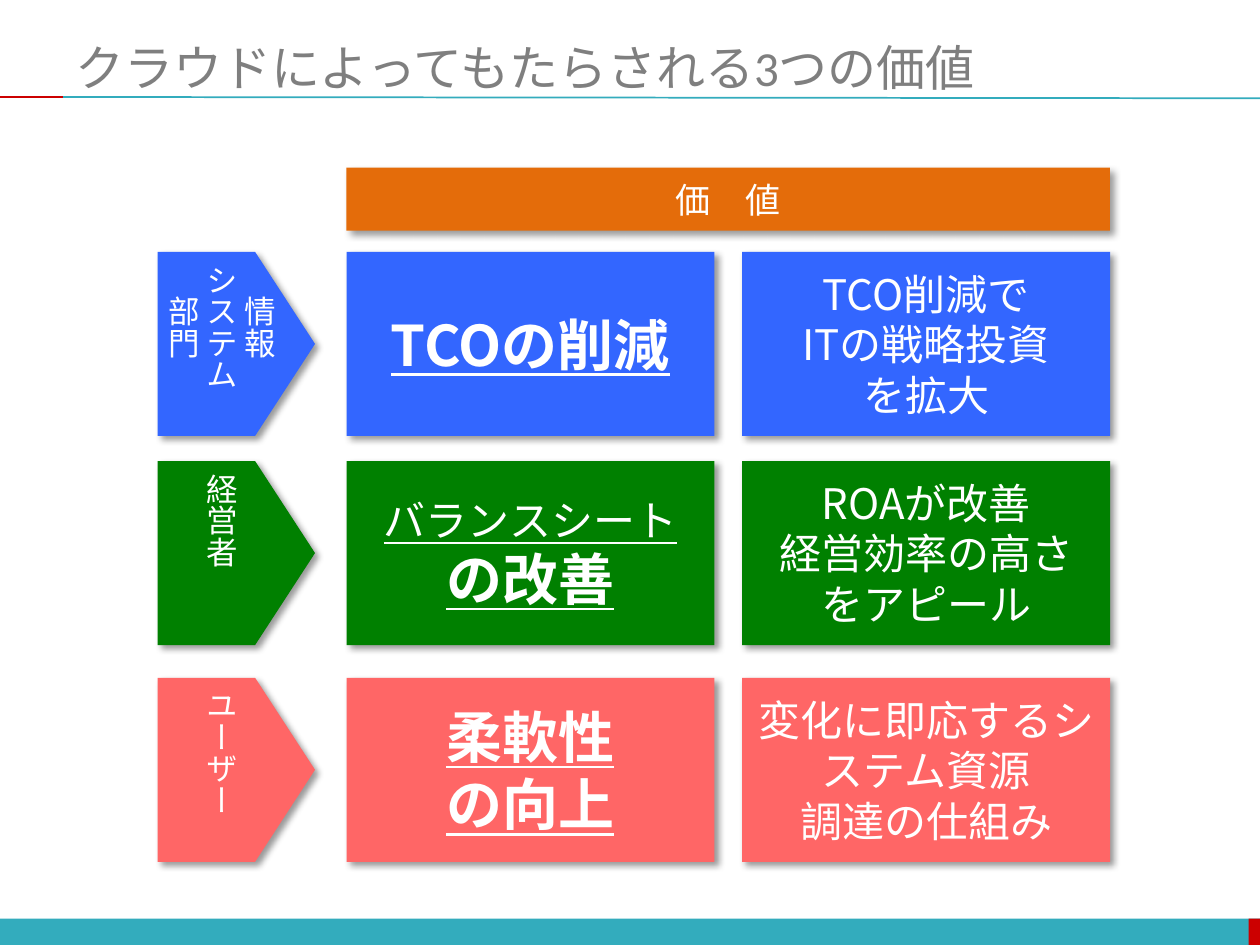
from lxml.etree import SubElement
from pptx import Presentation
from pptx.dml.color import RGBColor
from pptx.enum.shapes import MSO_CONNECTOR as Connector, MSO_SHAPE as Shape
from pptx.enum.text import MSO_ANCHOR as Anchor, PP_ALIGN as Align
from pptx.oxml.ns import qn
from pptx.util import Inches, Pt

COLORS = {"teal": "33ACBD", "red": "CC0000", "gray": "7F7F7F", "white": "FFFFFF",
          "orange": "E46C0A", "blue": "3366FF", "green": "008000", "pink": "FF6666",
          "black": "000000"}
JAPANESE = "Noto Sans CJK JP"
HEADING = {"size": Pt(28), "name": "Calibri"}
BANNER = {"size": Pt(20), "name": JAPANESE}
AUDIENCE = {"size": Pt(18), "name": JAPANESE}
DETAIL = {"size": Pt(24), "name": JAPANESE}
LINK = {**DETAIL, "underline": True}
STRONG = {**LINK, "size": Pt(32), "bold": True}

ROWS = [
    (2, "blue", ["情報", "システム", "部門"], [("TCOの削減", STRONG)],
     ["TCO削減で", "ITの戦略投資", "を拡大"]),
    (3.66, "green", ["経営者"], [("バランスシート", LINK), ("の改善", STRONG)],
     ["ROAが改善", "経営効率の高さ", "をアピール"]),
    (5.38, "pink", ["ユーザー"], [("柔軟性", STRONG), ("の向上", STRONG)],
     ["変化に即応するシステム資源", "調達の仕組み"]),
]


def color(name):
    """Return the named palette colour."""
    return RGBColor.from_string(COLORS[name])


def write(frame, lines, tint, align):
    """Fill a text frame with one paragraph per (text, format) pair."""
    frame.word_wrap = True
    frame.vertical_anchor = Anchor.MIDDLE
    for index, (text, style) in enumerate(lines):
        para = frame.paragraphs[0] if index == 0 else frame.add_paragraph()
        para.alignment = align
        span = para.add_run()
        span.text = text
        for key, value in style.items():
            setattr(span.font, key, value)
        span.font.color.rgb = color(tint)
        SubElement(span.font._element, qn("a:ea"), typeface=JAPANESE)


def add_block(slide, kind, box, fill):
    """Add a plain filled shape in a box given in inches."""
    shape = slide.shapes.add_shape(kind, *map(Inches, box))
    shape.shadow.inherit = False
    shape.fill.solid()
    shape.fill.fore_color.rgb = color(fill)
    shape.line.fill.background()
    return shape


def add_card(slide, kind, adjust, box, fill, lines):
    """Add a shadowed shape with centred white text."""
    card = add_block(slide, kind, box, fill)
    card.adjustments[0] = adjust
    effects = card._element.spPr.find(qn("a:effectLst"))
    shadow = SubElement(effects, qn("a:outerShdw"), blurRad=str(Pt(4)), dist=str(Pt(3)),
                        dir="2700000", algn="tl", rotWithShape="0")
    tint = SubElement(shadow, qn("a:srgbClr"), val=COLORS["black"])
    SubElement(tint, qn("a:alpha"), val="40000")
    write(card.text_frame, lines, "white", Align.CENTER)
    return card


def add_rule(slide, start, end, tint):
    """Draw a thin line between two points in inches."""
    rule = slide.shapes.add_connector(Connector.STRAIGHT, *map(Inches, start + end))
    rule.line.color.rgb = color(tint)
    rule.line.width = Pt(1)
    SubElement(rule._element.spPr, qn("a:effectLst"))


def add_header(slide, left, top, width, height):
    """Place the title and the two-colour rule under it."""
    base = top + height + 0.01
    add_rule(slide, (left, base), (left + width, base + 0.01), "teal")
    add_rule(slide, (0, base), (left, base), "red")
    title = slide.shapes.add_textbox(*map(Inches, (left, top, width, height)))
    write(title.text_frame, [("クラウドによってもたらされる3つの価値", HEADING)],
          "gray", Align.LEFT)


def add_footer(slide, left, top, width, height):
    """Place the bottom bar with its red right end."""
    end = 0.09
    add_block(slide, Shape.RECTANGLE, (left, top, width, height), "teal")
    add_block(slide, Shape.RECTANGLE, (left + width - end, top, end, height), "red")


def add_row(slide, left, top, width, height, fill, audience, value, detail):
    """Place an audience arrow and its two value cards."""
    arrow_width, card_width = 1.25, 2.92
    arrow = add_card(slide, Shape.PENTAGON, 0.38, (left, top, arrow_width, height), fill,
                     [(text, AUDIENCE) for text in audience])
    arrow.text_frame.word_wrap = False
    arrow.text_frame._txBody.bodyPr.set("vert", "eaVert")
    cards = [(left + arrow_width + 0.25, value),
             (left + width - card_width, [(text, DETAIL) for text in detail])]
    for card_left, lines in cards:
        add_card(slide, Shape.ROUNDED_RECTANGLE, 0, (card_left, top, card_width, height),
                 fill, lines)


def main():
    """Build and save the slide."""
    deck = Presentation()
    deck.slide_width, deck.slide_height = Inches(10), Inches(7.5)
    slide = deck.slides.add_slide(deck.slide_layouts[6])
    add_footer(slide, 0, 7.29, 10, 0.21)
    add_header(slide, 0.5, 0.3, 9.5, 0.46)
    add_card(slide, Shape.ROUNDED_RECTANGLE, 0, (2.75, 1.33, 6.06, 0.5), "orange",
             [("価　値", BANNER)])
    for top, *content in ROWS:
        add_row(slide, 1.25, top, 7.56, 1.46, *content)
    deck.save("out.pptx")


if __name__ == "__main__":
    main()
